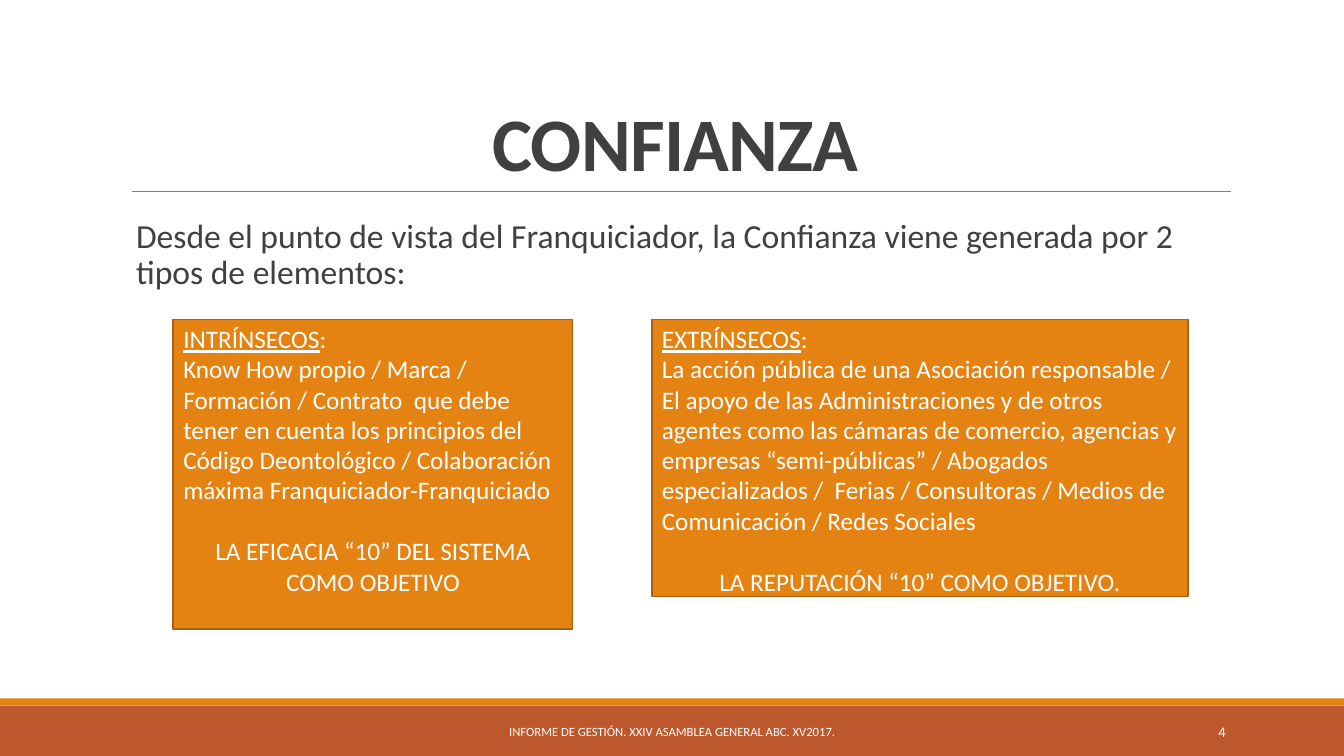
import pptx
import pptx.dml.color
import pptx.enum.shapes
import pptx.enum.text
import pptx.oxml.ns
import pptx.util
from lxml import etree

Cm, Pt = pptx.util.Cm, pptx.util.Pt
ALIGN = pptx.enum.text.PP_ALIGN
ANCHOR = pptx.enum.text.MSO_ANCHOR
RECTANGLE = pptx.enum.shapes.MSO_SHAPE.RECTANGLE

# Content
TITLE = "CONFIANZA"
INTRO = ("Desde el punto de vista del Franquiciador, la Confianza viene "
         "generada por 2 tipos de elementos:")
FOOTER = "INFORME DE GESTIÓN. XXIV ASAMBLEA GENERAL ABC. XV2017."
PAGE = "4"
BOXES = [
    {"heading": "INTRÍNSECOS",
     "body": "Know How propio / Marca / Formación / Contrato  que debe tener "
             "en cuenta los principios del Código Deontológico / Colaboración "
             "máxima Franquiciador-Franquiciado",
     "goal": "LA EFICACIA “10” DEL SISTEMA COMO OBJETIVO",
     "left": 4.37, "width": 10.06, "height": 7.8},
    {"heading": "EXTRÍNSECOS",
     "body": "La acción pública de una Asociación responsable / El apoyo de "
             "las Administraciones y de otros agentes como las cámaras de "
             "comercio, agencias y empresas “semi-públicas” / Abogados "
             "especializados /  Ferias / Consultoras / Medios de Comunicación "
             "/ Redes Sociales",
     "goal": "LA REPUTACIÓN “10” COMO OBJETIVO.",
     "left": 16.43, "width": 13.51, "height": 6.98},
]

# Style and layout, lengths in cm
WIDTH, HEIGHT = 33.87, 19.05
DARK, WHITE, ORANGE, RUST = "404040", "FFFFFF", "E48312", "BD582C"
BOX_LINE, RULE_LINE = "A9610D", "808080"
BOX_TOP = 8.05
BAND_TOP, STRIPE = 17.78, 0.18
FOOTER_TOP, FOOTER_HEIGHT = 17.93, 1.02


def color(value):
    return pptx.dml.color.RGBColor.from_string(value)


def add_run(paragraph, text, size, ink=WHITE, bold=False, underline=False):
    run = paragraph.add_run()
    run.text = text
    run.font.name = "Calibri"
    run.font.size = Pt(size)
    run.font.color.rgb = color(ink)
    run.font.bold = bold
    run.font.underline = underline
    return run


def add_rectangle(slide, left, top, width, height, fill, line=None):
    shape = slide.shapes.add_shape(
        RECTANGLE, Cm(left), Cm(top), Cm(width), Cm(height))
    shape.shadow.inherit = False
    shape.fill.solid()
    shape.fill.fore_color.rgb = color(fill)
    if line:
        shape.line.color.rgb = color(line)
        shape.line.width = Pt(1.25)
    else:
        shape.line.fill.background()
    return shape


def add_text(slide, left, top, width, height, text, size, ink=WHITE,
             align=ALIGN.LEFT, anchor=ANCHOR.MIDDLE):
    frame = slide.shapes.add_textbox(
        Cm(left), Cm(top), Cm(width), Cm(height)).text_frame
    frame.word_wrap = True
    frame.vertical_anchor = anchor
    paragraph = frame.paragraphs[0]
    paragraph.alignment = align
    add_run(paragraph, text, size, ink)
    return frame


def add_title(slide):
    title = slide.shapes.title
    title.left, title.top = Cm(3.05), Cm(0.79)
    title.width, title.height = Cm(27.94), Cm(4.04)
    frame = title.text_frame
    frame.auto_size = pptx.enum.text.MSO_AUTO_SIZE.NONE
    frame.vertical_anchor = ANCHOR.BOTTOM
    paragraph = frame.paragraphs[0]
    paragraph.alignment = ALIGN.CENTER
    paragraph.line_spacing = 0.85
    run = add_run(paragraph, TITLE, 54, DARK, bold=True)
    run.font._element.set("spc", "-50")


def add_rule(slide):
    rule = slide.shapes.add_connector(
        pptx.enum.shapes.MSO_CONNECTOR.STRAIGHT,
        Cm(3.33), Cm(4.83), Cm(31.01), Cm(4.83))
    rule.line.color.rgb = color(RULE_LINE)
    rule.line.width = Pt(0.5)
    etree.SubElement(rule._element.spPr, pptx.oxml.ns.qn("a:effectLst"))


def add_box(slide, box):
    shape = add_rectangle(slide, box["left"], BOX_TOP, box["width"],
                          box["height"], ORANGE, BOX_LINE)
    frame = shape.text_frame
    frame.word_wrap = True
    frame.vertical_anchor = ANCHOR.TOP
    frame.margin_top = Cm(0.1)
    heading, body, goal = (
        frame.paragraphs[0], frame.add_paragraph(), frame.add_paragraph())
    heading.alignment = body.alignment = ALIGN.LEFT
    goal.alignment = ALIGN.CENTER
    goal.space_before = Pt(22)
    add_run(heading, box["heading"], 18, underline=True)
    add_run(heading, ":", 18)
    add_run(body, box["body"], 18)
    add_run(goal, box["goal"], 18)


def main():
    presentation = pptx.Presentation()
    presentation.slide_width, presentation.slide_height = Cm(WIDTH), Cm(HEIGHT)
    slide = presentation.slides.add_slide(presentation.slide_layouts[5])

    # Bottom band, title and rule
    add_rectangle(slide, 0, BAND_TOP, WIDTH, HEIGHT - BAND_TOP, RUST)
    add_rectangle(slide, 0, BAND_TOP - STRIPE, WIDTH, STRIPE, ORANGE)
    add_rule(slide)
    add_title(slide)

    # Introduction
    intro = add_text(slide, 3.43, 5.41, 27.94, 2.4, INTRO, 24, DARK,
                     anchor=ANCHOR.TOP)
    intro.margin_left = intro.margin_right = 0
    intro.paragraphs[0].line_spacing = 0.9

    # Two kinds of elements
    for box in BOXES:
        add_box(slide, box)

    # Footer and page number
    add_text(slide, 10.24, FOOTER_TOP, 13.39, FOOTER_HEIGHT, FOOTER, 9,
             align=ALIGN.CENTER)
    add_text(slide, 27.51, FOOTER_TOP, 3.63, FOOTER_HEIGHT, PAGE, 10.5,
             align=ALIGN.RIGHT)

    presentation.save("out.pptx")


if __name__ == "__main__":
    main()
